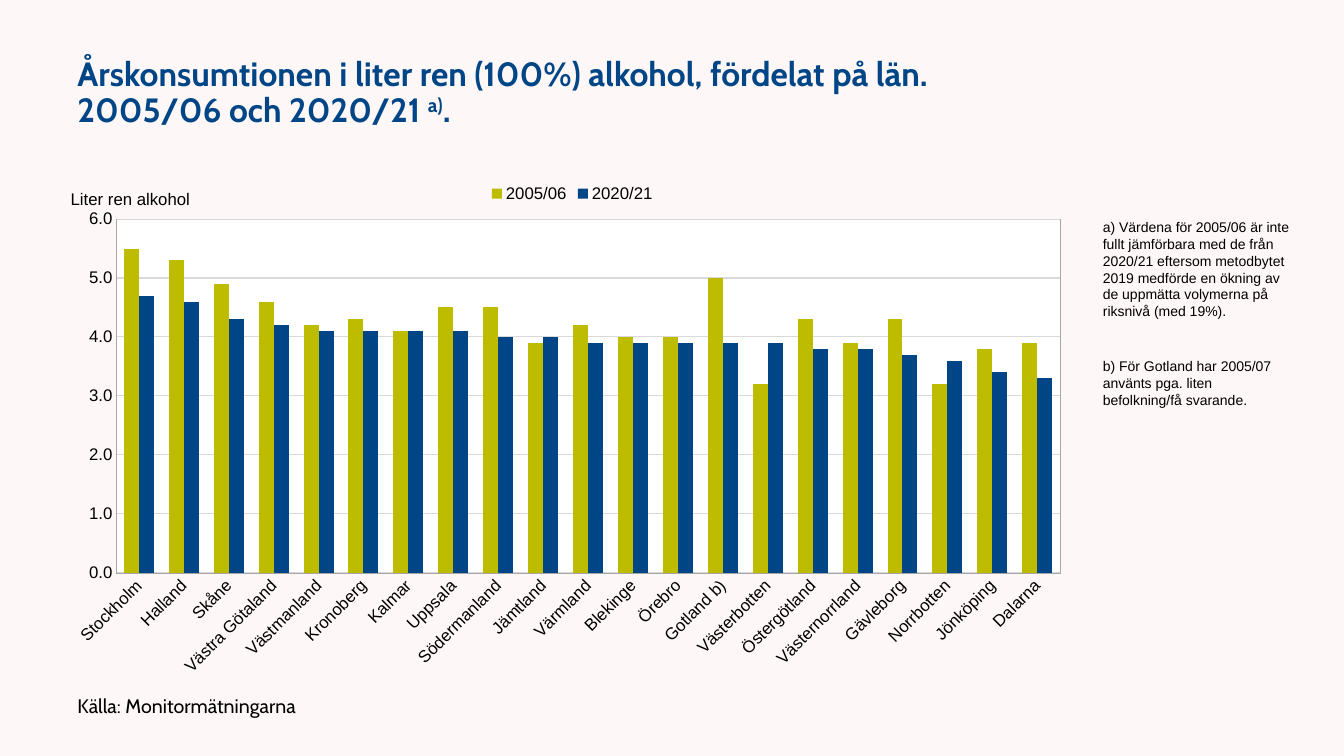
import pptx
import pptx.chart.data
import pptx.dml.color
import pptx.enum.chart
import pptx.enum.text
import pptx.oxml
import pptx.oxml.ns
import pptx.util

Inches, Pt = pptx.util.Inches, pptx.util.Pt
RGB = pptx.dml.color.RGBColor.from_string
qn = pptx.oxml.ns.qn
MIDDLE = pptx.enum.text.MSO_ANCHOR.MIDDLE
TOP = pptx.enum.text.MSO_ANCHOR.TOP

THEME = {
    "background": "FEF7F7", "plot": "FFFFFF", "axis": "A6A6A6", "grid": "D9D9D9",
    "series": ["BEBC00", "004687"],
    "title": {"size": 24, "name": "Cabin", "color": "004687", "bold": True},
    "source": {"size": 14, "name": "Cabin", "color": "000000"},
    "chart": {"size": 12, "name": "Arial", "color": "000000", "bold": False},
    "note": {"size": 10, "name": "Arial", "color": "000000"},
}

TEXTS = [
    {"box": (0.67, 0.3, 12, 1.25), "style": "title", "anchor": MIDDLE, "spacing": 0.9,
     "runs": [("Årskonsumtionen i liter ren (100%) alkohol, fördelat på län.\n2005/06 och 2020/21 ", 0),
              ("a)", 30), (".", 0)]},
    {"box": (0.67, 6.83, 2.59, 0.37), "style": "source", "anchor": MIDDLE, "spacing": 0.9,
     "runs": [("Källa: Monitormätningarna", 0)]},
    {"box": (10.84, 2.12, 2.07, 1.11), "style": "note", "anchor": TOP, "spacing": 1,
     "runs": [("a) Värdena för 2005/06 är inte fullt jämförbara med de från 2020/21 eftersom metodbytet "
               "2019 medförde en ökning av de uppmätta volymerna på riksnivå (med 19%).", 0)]},
    {"box": (10.84, 3.5, 2.23, 0.61), "style": "note", "anchor": TOP, "spacing": 1,
     "runs": [("b) För Gotland har 2005/07 använts pga. liten\nbefolkning/få svarande.", 0)]},
]

CHART_BOX = (0.67, 1.69, 9.89, 5.14)
AXIS_TITLE = "Liter ren alkohol"
PERIODS = ("2005/06", "2020/21")
COUNTIES = [
    ("Stockholm", 5.5, 4.7), ("Halland", 5.3, 4.6), ("Skåne", 4.9, 4.3),
    ("Västra Götaland", 4.6, 4.2), ("Västmanland", 4.2, 4.1), ("Kronoberg", 4.3, 4.1),
    ("Kalmar", 4.1, 4.1), ("Uppsala", 4.5, 4.1), ("Södermanland", 4.5, 4.0),
    ("Jämtland", 3.9, 4.0), ("Värmland", 4.2, 3.9), ("Blekinge", 4.0, 3.9),
    ("Örebro", 4.0, 3.9), ("Gotland b)", 5.0, 3.9), ("Västerbotten", 3.2, 3.9),
    ("Östergötland", 4.3, 3.8), ("Västernorrland", 3.9, 3.8), ("Gävleborg", 4.3, 3.7),
    ("Norrbotten", 3.2, 3.6), ("Jönköping", 3.8, 3.4), ("Dalarna", 3.9, 3.3),
]


def set_font(font, style):
    for key, value in THEME[style].items():
        if key == "color":
            font.color.rgb = RGB(value)
        else:
            setattr(font, key, Pt(value) if key == "size" else value)


def set_line(line, color, width):
    line.color.rgb = RGB(THEME[color])
    line.width = Pt(width)


def add_text(slide, item):
    sp = slide.shapes.add_textbox(*map(Inches, item["box"]))
    tf = sp.text_frame
    tf.word_wrap = True
    tf.vertical_anchor = item["anchor"]
    p = tf.paragraphs[0]
    p.line_spacing = item["spacing"]
    for text, raised in item["runs"]:
        for i, line in enumerate(text.split("\n")):
            if i:
                p.add_line_break()
            r = p.add_run()
            r.text = line
            set_font(r.font, item["style"])
            if raised:
                r._r.get_or_add_rPr().set("baseline", str(raised * 1000))


def set_layout(parent, after=None, inner=False, **place):
    old = parent.find(qn("c:layout"))
    if old is not None:
        parent.remove(old)
    target = '<c:layoutTarget val="inner"/>' if inner else ""
    modes = "".join(f'<c:{k}Mode val="edge"/>' for k in "xy")
    values = "".join(f'<c:{k} val="{v}"/>' for k, v in place.items())
    layout = pptx.oxml.parse_xml(
        f'<c:layout {pptx.oxml.ns.nsdecls("c")}><c:manualLayout>'
        f'{target}{modes}{values}</c:manualLayout></c:layout>')
    if after:
        parent.find(qn(after)).addnext(layout)
    else:
        parent.insert(0, layout)


def add_chart(slide):
    names, *columns = zip(*COUNTIES)
    data = pptx.chart.data.CategoryChartData(number_format="0.0")
    data.categories = names
    for period, values in zip(PERIODS, columns):
        data.add_series(period, values)
    kind = pptx.enum.chart.XL_CHART_TYPE.COLUMN_CLUSTERED
    chart = slide.shapes.add_chart(kind, *map(Inches, CHART_BOX), data).chart
    set_font(chart.font, "chart")
    chart.has_title = False

    plot = chart.plots[0]
    plot.gap_width, plot.overlap, plot.vary_by_categories = 100, 0, False
    for series, color in zip(plot.series, THEME["series"]):
        series.format.fill.solid()
        series.format.fill.fore_color.rgb = RGB(color)

    for axis in (chart.category_axis, chart.value_axis):
        axis.major_tick_mark = axis.minor_tick_mark = pptx.enum.chart.XL_TICK_MARK.NONE
        set_font(axis.tick_labels.font, "chart")
        set_line(axis.format.line, "axis", 0.25)
    chart.category_axis._element.find(qn("c:txPr")).find(qn("a:bodyPr")).set("rot", "-2700000")

    axis = chart.value_axis
    axis.minimum_scale, axis.maximum_scale, axis.major_unit = 0, 6, 1
    axis.tick_labels.number_format = "0.0"
    axis.tick_labels.number_format_is_linked = False
    set_line(axis.major_gridlines.format.line, "grid", 0.75)
    tf = axis.axis_title.text_frame
    tf.text = AXIS_TITLE
    set_font(tf.paragraphs[0].runs[0].font, "chart")
    body = tf._txBody.find(qn("a:bodyPr"))
    body.set("rot", "0")
    body.set("vert", "horz")
    set_layout(axis.axis_title._element, after="c:tx", x=0, y=0.03)

    chart.has_legend = True
    chart.legend.position = pptx.enum.chart.XL_LEGEND_POSITION.TOP
    chart.legend.include_in_layout = False
    set_font(chart.legend.font, "chart")
    set_layout(chart.legend._element, after="c:legendPos", x=0.42, y=0.02)

    area = chart._chartSpace.chart.plotArea
    set_layout(area, inner=True, x=0.049, y=0.094, w=0.946, h=0.683)
    area.append(pptx.oxml.parse_xml(
        f'<c:spPr {pptx.oxml.ns.nsdecls("c", "a")}>'
        f'<a:solidFill><a:srgbClr val="{THEME["plot"]}"/></a:solidFill>'
        f'<a:ln w="{Pt(0.25)}"><a:solidFill><a:srgbClr val="{THEME["axis"]}"/></a:solidFill></a:ln>'
        '</c:spPr>'))


def main():
    prs = pptx.Presentation()
    prs.slide_width, prs.slide_height = Inches(13.33), Inches(7.5)
    slide = prs.slides.add_slide(prs.slide_layouts[6])
    slide.background.fill.solid()
    slide.background.fill.fore_color.rgb = RGB(THEME["background"])
    add_chart(slide)
    for item in TEXTS:
        add_text(slide, item)
    prs.save("out.pptx")


if __name__ == "__main__":
    main()
